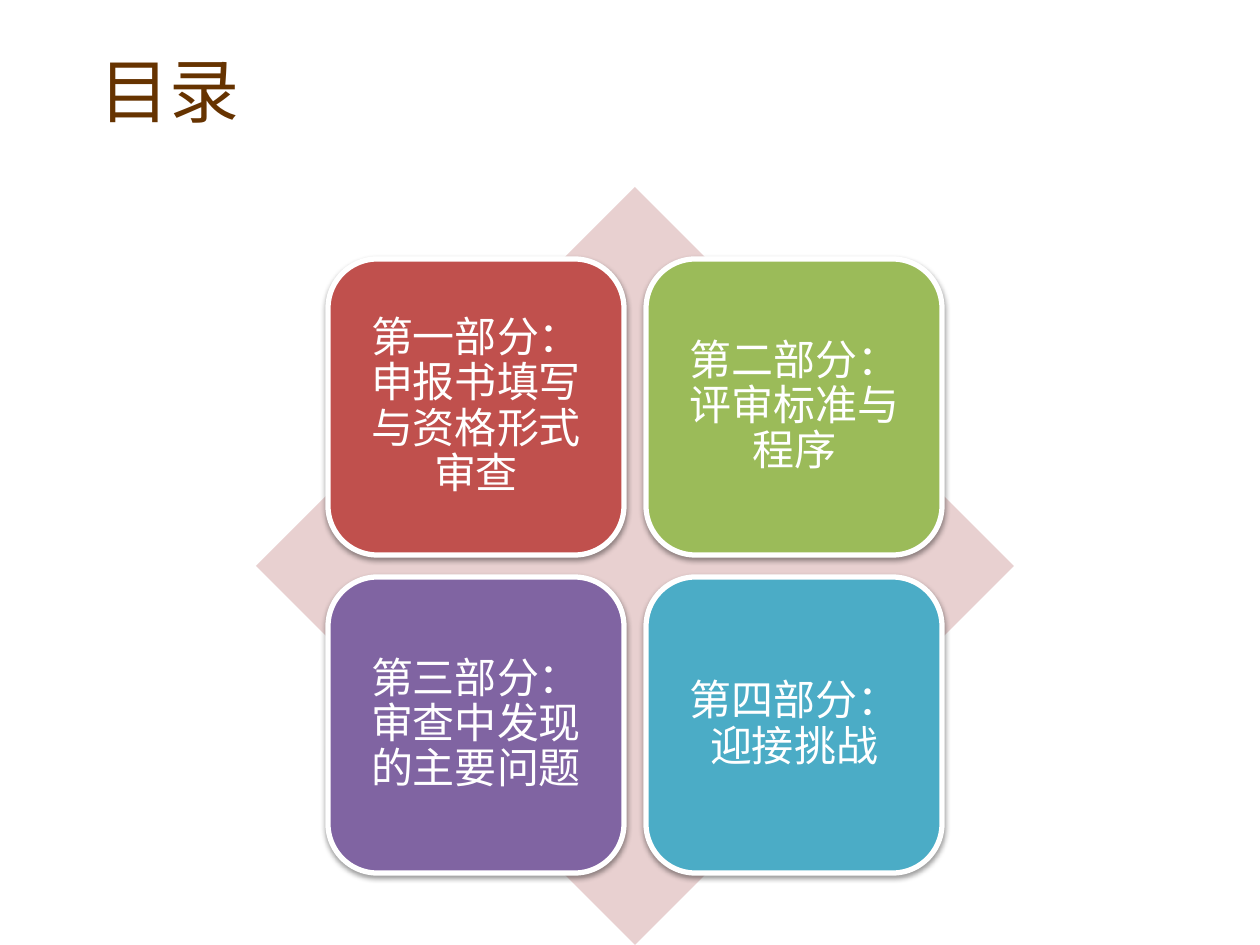
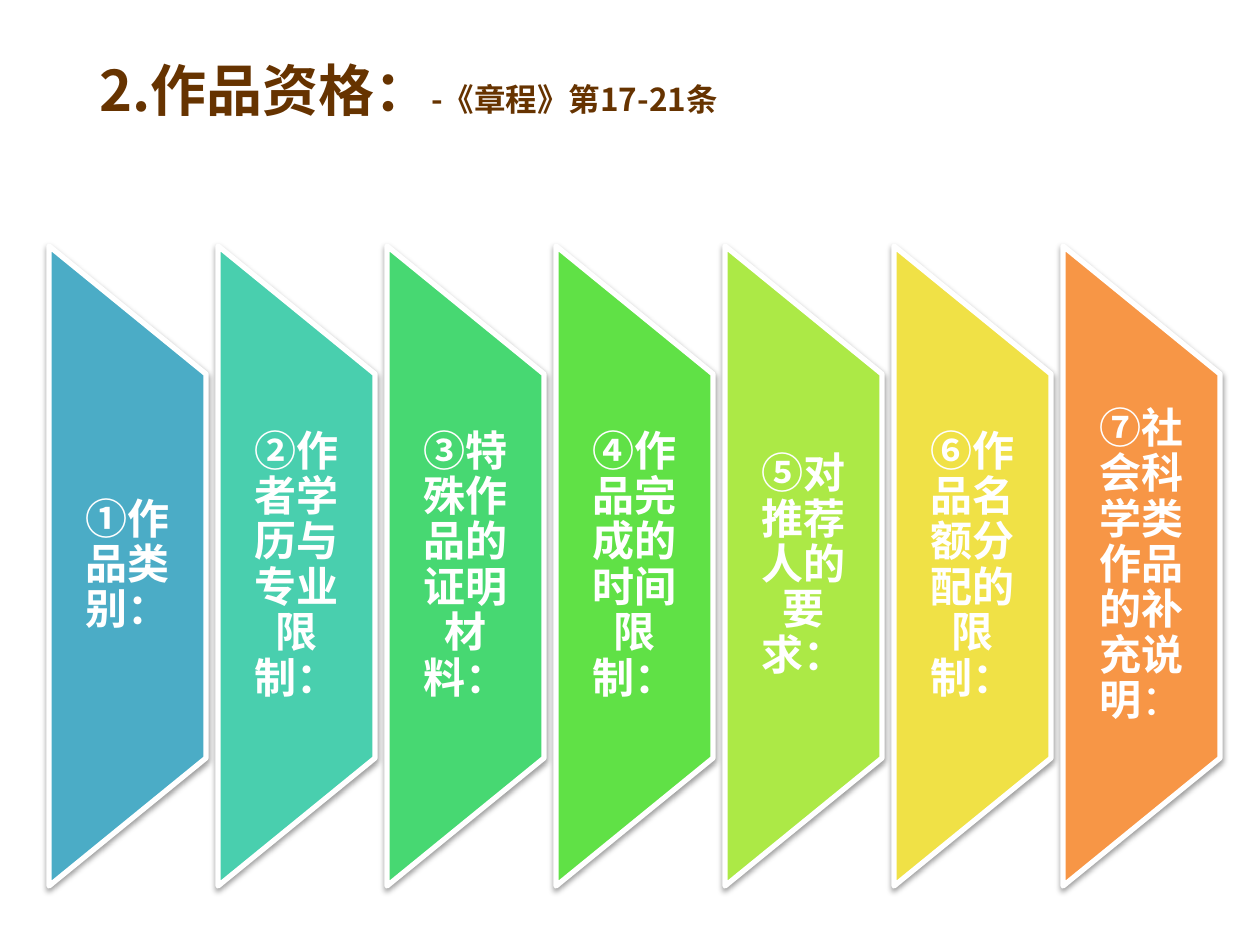
from lxml import etree
from pptx import Presentation
from pptx.dml.color import RGBColor
from pptx.enum.shapes import MSO_SHAPE
from pptx.enum.text import MSO_ANCHOR, MSO_AUTO_SIZE, PP_ALIGN
from pptx.oxml.ns import qn
from pptx.util import Emu, Pt

PX_PER_INCH = 126
EMU_PER_INCH = 914400
TITLE_ONLY = 5

DIAMOND = MSO_SHAPE.DIAMOND
ROUND_RECT = MSO_SHAPE.ROUNDED_RECTANGLE
TRAPEZOID = MSO_SHAPE.FLOWCHART_MANUAL_OPERATION
MIDDLE = MSO_ANCHOR.MIDDLE
NO_FIT = MSO_AUTO_SIZE.NONE
LEFT, CENTER = PP_ALIGN.LEFT, PP_ALIGN.CENTER

FONT_SC = "Noto Sans CJK SC"
FONT_KR = "Noto Sans CJK KR"

BROWN = RGBColor(0x66, 0x33, 0x00)
WHITE = RGBColor(0xFF, 0xFF, 0xFF)
PINK = RGBColor(0xE8, 0xD0, 0xD0)
RED = RGBColor(0xC0, 0x50, 0x4D)
OLIVE = RGBColor(0x9B, 0xBB, 0x59)
PURPLE = RGBColor(0x80, 0x64, 0xA2)
BLUE = RGBColor(0x4B, 0xAC, 0xC6)
TEAL = RGBColor(0x49, 0xCF, 0xAE)
EMERALD = RGBColor(0x47, 0xD8, 0x72)
GREEN = RGBColor(0x60, 0xE1, 0x46)
LIME = RGBColor(0xAC, 0xE9, 0x46)
YELLOW = RGBColor(0xF0, 0xE1, 0x46)
ORANGE = RGBColor(0xF7, 0x96, 0x46)

PARTS = [
    ("第一部分：申报书填写与资格形式审查", RED),
    ("第二部分：评审标准与程序", OLIVE),
    ("第三部分：审查中发现的主要问题", PURPLE),
    ("第四部分：迎接挑战", BLUE),
]

REQUIREMENTS = [
    ([("①作品类别：", True)], BLUE),
    ([("②作者学历与专业限制：", True)], TEAL),
    ([("③特殊作品的证明材料：", True)], EMERALD),
    ([("④作品完成的时间限制：", True)], GREEN),
    ([("⑤对推荐人的要求：", True)], LIME),
    ([("⑥作品名额分配的限制：", True)], YELLOW),
    ([("⑦社会科学类作品的补充说明", True), ("：", False)], ORANGE),
]


def px(n):
    return Emu(round(n * EMU_PER_INCH / PX_PER_INCH))


def add_run(p, text, size, color, bold=False, font=FONT_SC):
    r = p.add_run()
    r.text = text
    r.font.size = Pt(size)
    r.font.bold = bold
    r.font.color.rgb = color
    r.font.name = font
    etree.SubElement(r.font._element, qn("a:ea"), typeface=font)


def add_title_slide(prs, runs):
    s = prs.slides.add_slide(prs.slide_layouts[TITLE_ONLY])
    title = s.shapes.title
    title.left, title.top = px(87), px(10)
    title.width, title.height = px(1071), px(158)
    tf = title.text_frame
    tf.auto_size = NO_FIT
    tf.vertical_anchor = MIDDLE
    p = tf.paragraphs[0]
    p.alignment = LEFT
    for text, size, bold in runs:
        add_run(p, text, size, BROWN, bold)
    return s


def add_filled(s, kind, left, top, width, height, color):
    sp = s.shapes.add_shape(kind, px(left), px(top), px(width), px(height))
    sp.shadow.inherit = False
    sp.fill.solid()
    sp.fill.fore_color.rgb = color
    sp.line.fill.background()
    return sp


def add_raised(s, kind, left, top, width, height, color):
    sp = add_filled(s, kind, left, top, width, height, color)
    sp.line.color.rgb = WHITE
    sp.line.width = Pt(3)
    effects = sp._element.spPr.find(qn("a:effectLst"))
    shadow = etree.SubElement(
        effects, qn("a:outerShdw"), blurRad=str(Pt(3.1)), dist=str(Pt(1.6)),
        dir="5400000", rotWithShape="0")
    black = etree.SubElement(shadow, qn("a:srgbClr"), val="000000")
    etree.SubElement(black, qn("a:alpha"), val="38000")
    return sp


def write_label(sp, runs, font, inset_x, inset_y):
    tf = sp.text_frame
    tf.word_wrap = True
    tf.vertical_anchor = MIDDLE
    tf.margin_left = tf.margin_right = px(inset_x)
    tf.margin_top = tf.margin_bottom = px(inset_y)
    p = tf.paragraphs[0]
    p.alignment = CENTER
    p.line_spacing = 0.9
    p._p.get_or_add_pPr().set("hangingPunct", "0")
    for text, bold in runs:
        add_run(p, text, 24, WHITE, bold, font)


def add_contents(prs):
    s = add_title_slide(prs, [("目录", 40, False)])
    add_filled(s, DIAMOND, 256, 187, 758, 758, PINK)
    size, step = 296, 318
    for i, (text, color) in enumerate(PARTS):
        row, col = divmod(i, 2)
        card = add_raised(s, ROUND_RECT, 328 + col * step, 259 + row * step,
                          size, size, color)
        write_label(card, [(text, False)], FONT_SC, 13, 13)


def add_requirements(prs):
    s = add_title_slide(
        prs, [("2.作品资格：", 32, True), ("-《章程》第17-21条", 18, True)])
    length, width, step = 640, 157, 169
    label_height = 384
    center_y = 566
    for i, (runs, color) in enumerate(REQUIREMENTS):
        left = 49 + i * step
        band = add_raised(s, TRAPEZOID, left + (width - length) / 2,
                          center_y - width / 2, length, width, color)
        band.rotation = 270
        label = s.shapes.add_textbox(
            px(left), px(center_y - label_height / 2),
            px(width), px(label_height))
        write_label(label, runs, FONT_KR, 21, 0)


def main():
    prs = Presentation()
    prs.slide_width, prs.slide_height = px(1260), px(945)
    add_contents(prs)
    add_requirements(prs)
    prs.save("out.pptx")


if __name__ == "__main__":
    main()
